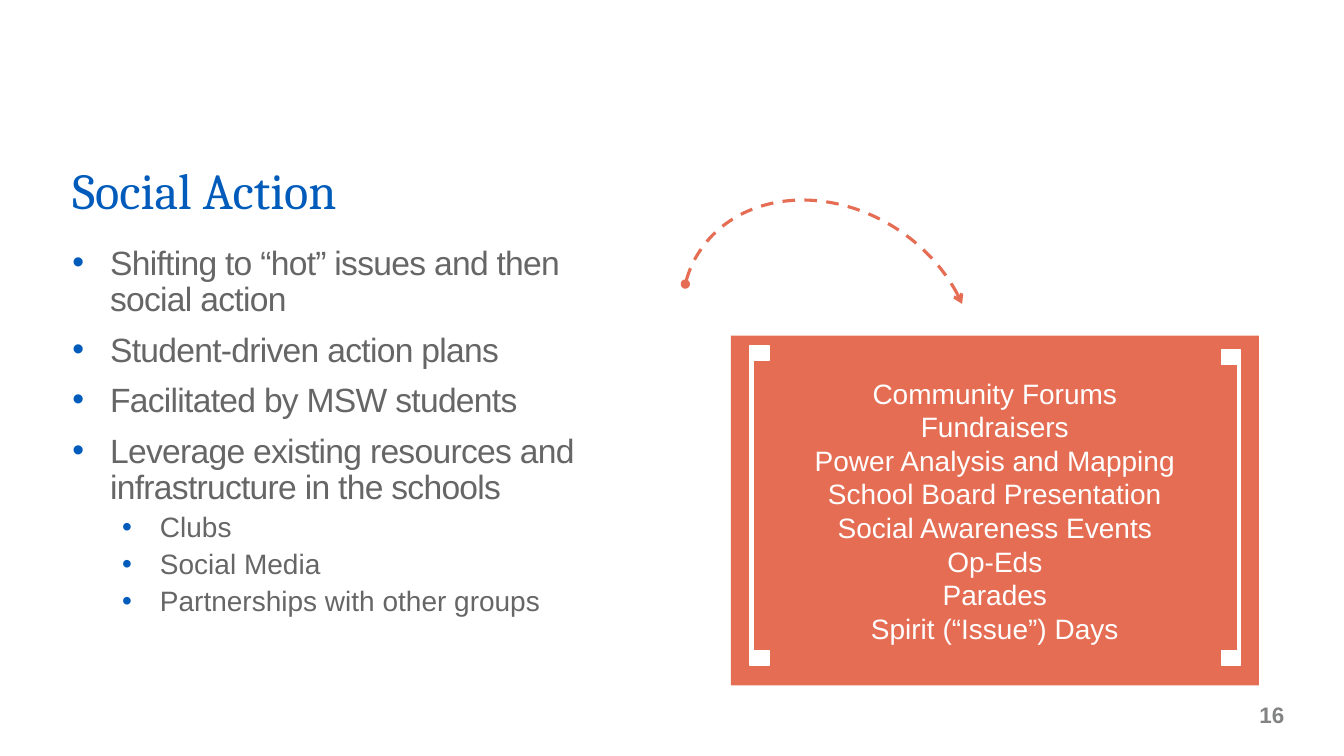
from lxml import etree
from pptx import Presentation
from pptx.dml.color import RGBColor
from pptx.enum.dml import MSO_LINE
from pptx.enum.shapes import MSO_SHAPE
from pptx.enum.text import MSO_ANCHOR, PP_ALIGN
from pptx.oxml.ns import qn
from pptx.util import Pt

# Content
TITLE = "Social Action"
BULLETS = [
    (0, "Shifting to “hot” issues and then social action"),
    (0, "Student-driven action plans"),
    (0, "Facilitated by MSW students"),
    (0, "Leverage existing resources and infrastructure in the schools"),
    (1, "Clubs"),
    (1, "Social Media"),
    (1, "Partnerships with other groups"),
]
ACTIONS = [
    "Community Forums", "Fundraisers", "Power Analysis and Mapping",
    "School Board Presentation", "Social Awareness Events", "Op-Eds",
    "Parades", "Spirit (“Issue”) Days",
]
PAGE = "16"

# Style
BLUE = RGBColor(0x00, 0x5B, 0xBB)
GREY = RGBColor(0x66, 0x66, 0x66)
PAGE_GREY = RGBColor(0x82, 0x83, 0x83)
CORAL = RGBColor(0xE5, 0x6D, 0x54)
WHITE = RGBColor(0xFF, 0xFF, 0xFF)
# Per level: size, left margin, line spacing, space before, letter spacing
LEVELS = [(24, 27, Pt(26), 10, -50), (20, 62.6, 0.9, 5, 0)]
HANGING = 27
# Outer x, top, bottom, inward direction
BRACKETS = [(535.7, 247, 475.2, 1), (886.3, 249.8, 475.2, -1)]
ARM, BAR, SERIF = 13.7, 2.2, 10.5


def style(p, size, color, name="Arial", bold=False):
    for r in p.runs:
        f = r.font
        f.size, f.name, f.bold = Pt(size), name, bold
        f.color.rgb = color


def add_text(s, box, anchor):
    tf = s.shapes.add_textbox(*map(Pt, box)).text_frame
    tf.word_wrap = True
    tf.vertical_anchor = anchor
    return tf


def add_bullet(p):
    pPr = p._p.get_or_add_pPr()
    clr = etree.SubElement(pPr, qn("a:buClr"))
    etree.SubElement(clr, qn("a:srgbClr"), val=str(BLUE))
    etree.SubElement(pPr, qn("a:buFont"), typeface="Arial")
    etree.SubElement(pPr, qn("a:buChar"), char="•")
    return pPr


prs = Presentation()
prs.slide_width, prs.slide_height = Pt(960), Pt(540)
s = prs.slides.add_slide(prs.slide_layouts[6])

# Title and page number
p = add_text(s, (44.6, 103.7, 828, 56.2), MSO_ANCHOR.BOTTOM).paragraphs[0]
p.text = TITLE
p.line_spacing = 0.8
style(p, 36, BLUE, "Cambria")

tf = add_text(s, (869.8, 489.6, 56.9, 41.8), MSO_ANCHOR.MIDDLE)
tf.margin_left = tf.margin_right = Pt(9.4)
p = tf.paragraphs[0]
p.text = PAGE
p.alignment = PP_ALIGN.RIGHT
style(p, 16, PAGE_GREY, bold=True)

# Bulleted list
tf = add_text(s, (44.6, 172.1, 410.4, 298.8), MSO_ANCHOR.TOP)
tf.text = "\n".join(text for _, text in BULLETS)
for i, (p, (level, _)) in enumerate(zip(tf.paragraphs, BULLETS)):
    size, margin, spacing, before, tracking = LEVELS[level]
    pPr = add_bullet(p)
    pPr.set("marL", str(Pt(margin)))
    pPr.set("indent", str(-Pt(HANGING)))
    p.level = level
    p.line_spacing = spacing
    p.space_before = Pt(before if i else 0)
    style(p, size, GREY)
    p.runs[0].font._element.set("spc", str(tracking))

# Coral panel
panel = s.shapes.add_shape(MSO_SHAPE.RECTANGLE, Pt(522), Pt(239.8), Pt(377.3), Pt(249.8))
panel.shadow.inherit = False
panel.fill.solid()
panel.fill.fore_color.rgb = CORAL
panel.line.fill.background()
tf = panel.text_frame
tf.word_wrap = True
tf.vertical_anchor = MSO_ANCHOR.MIDDLE
tf.text = "\n".join(ACTIONS)
for p in tf.paragraphs:
    p.alignment = PP_ALIGN.CENTER
    style(p, 20, WHITE)

# Square brackets
for x, top, bottom, way in BRACKETS:
    tip, inner = x + way * ARM, x + way * BAR
    outline = [(tip, top), (x, top), (x, bottom), (tip, bottom),
               (tip, bottom - SERIF), (inner, bottom - SERIF),
               (inner, top + SERIF), (tip, top + SERIF)]
    points = [(Pt(px), Pt(py)) for px, py in outline]
    fb = s.shapes.build_freeform(*points[0])
    fb.add_line_segments(points[1:], close=True)
    bracket = fb.convert_to_shape()
    bracket.shadow.inherit = False
    bracket.fill.solid()
    bracket.fill.fore_color.rgb = WHITE
    bracket.line.color.rgb = WHITE
    bracket.line.width = Pt(1)

# Dashed arc from the list to the panel
arc = s.shapes.add_shape(MSO_SHAPE.ARC, Pt(481.7), Pt(149), Pt(219.6), Pt(181.4))
arc.shadow.inherit = False
arc.adjustments[0], arc.adjustments[1] = 207.93, 80.02
arc.rotation = 213.3
arc.fill.background()
arc.line.color.rgb = CORAL
arc.line.width = Pt(2.25)
arc.line.dash_style = MSO_LINE.DASH
ln = arc.line._get_or_add_ln()
etree.SubElement(ln, qn("a:headEnd"), type="oval")
etree.SubElement(ln, qn("a:tailEnd"), type="arrow")

prs.save("out.pptx")
